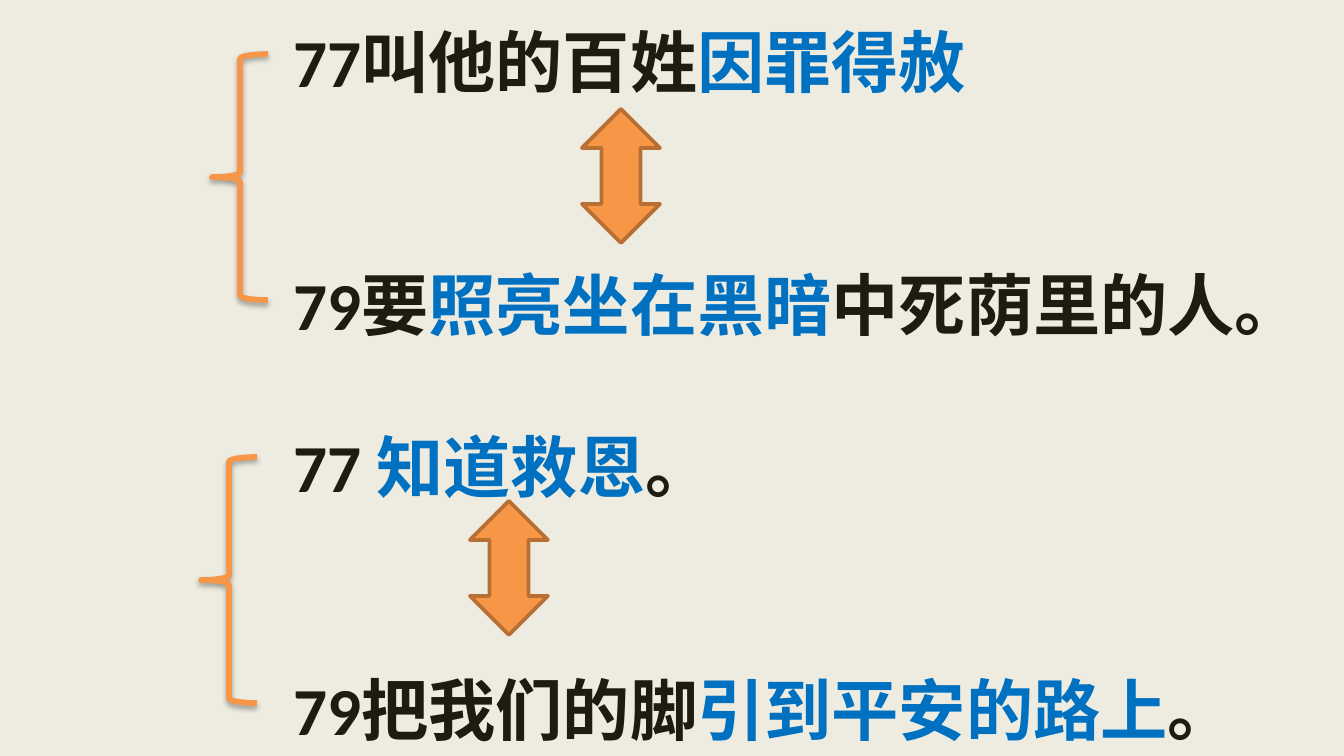
from lxml import etree
from pptx import Presentation
from pptx.dml.color import RGBColor
from pptx.enum.shapes import MSO_SHAPE
from pptx.enum.text import MSO_ANCHOR, PP_ALIGN
from pptx.oxml import parse_xml
from pptx.util import Emu, Pt

ARROW, BRACE = MSO_SHAPE.UP_DOWN_ARROW, MSO_SHAPE.LEFT_BRACE
TOP, LEFT = MSO_ANCHOR.TOP, PP_ALIGN.LEFT
PX = 914400 / 134.4
W, H = 1344, 756
PITCH = 43.4  # line height in points
DARK, BLUE, ORANGE, RUST = "1E1C11", "0070C0", "F79646", "B76F34"

# Verses: empty lines before, then (text, colour) runs
VERSES = [
    (0, [("77叫他的百姓", DARK), ("因罪得赦", BLUE)]),
    (2, [("79要", DARK), ("照亮坐在黑暗", BLUE), ("中死荫里的人。", DARK)]),
    (1, [("77 ", DARK), ("知道救恩", BLUE), ("。", DARK)]),
    (2, [("79把我们的脚", DARK), ("引到平安的路上", BLUE), ("。", DARK)]),
]
# Left and top of each mark, in px
ARROWS, ARROW_SIZE = [(582, 109), (470, 501)], (78, 134)
BRACES, BRACE_SIZE = [(212, 54), (201, 457)], (56, 246)

SHADOW = """<a:effectLst xmlns:a="http://schemas.openxmlformats.org/drawingml/2006/main">
<a:outerShdw blurRad="39370" dist="22860" dir="5400000" rotWithShape="0">
<a:srgbClr val="000000"><a:alpha val="35000"/></a:srgbClr></a:outerShdw></a:effectLst>"""


def px(n):
    return Emu(round(n * PX))


def rgb(value):
    return RGBColor.from_string(value)


def add_mark(s, kind, place, size, line, width):
    sp = s.shapes.add_shape(kind, *map(px, place + size))
    sp.shadow.inherit = False
    sp.line.color.rgb = rgb(line)
    sp.line.width = Pt(width)
    return sp


def add_verses(s):
    tf = s.shapes.add_textbox(px(280), 0, px(W - 280), px(H)).text_frame
    tf.word_wrap = True
    tf.vertical_anchor = TOP
    tf.margin_top = px(20)
    for i, (gap, runs) in enumerate(VERSES):
        p = tf.add_paragraph() if i else tf.paragraphs[0]
        p.alignment = LEFT
        p.line_spacing = Pt(PITCH)
        if gap:
            p.space_before = Pt(gap * PITCH)
        for text, color in runs:
            r = p.add_run()
            r.text = text
            r.font.name, r.font.size, r.font.bold = "Calibri", Pt(36), True
            r.font.color.rgb = rgb(color)


def main():
    prs = Presentation()
    prs.slide_width, prs.slide_height = px(W), px(H)
    s = prs.slides.add_slide(prs.slide_layouts[6])
    s.background.fill.solid()
    s.background.fill.fore_color.rgb = rgb("EEECE1")

    add_verses(s)

    # Arrows between paired verses
    for place in ARROWS:
        sp = add_mark(s, ARROW, place, ARROW_SIZE, RUST, 2)
        sp.fill.solid()
        sp.fill.fore_color.rgb = rgb(ORANGE)

    # Braces with a soft shadow
    for place in BRACES:
        sp = add_mark(s, BRACE, place, BRACE_SIZE, ORANGE, 3)
        sp.fill.background()
        props = sp.element.spPr
        empty = props.find("{*}effectLst")
        props.replace(empty, parse_xml(etree.tostring(etree.fromstring(SHADOW))))

    prs.save("out.pptx")


if __name__ == "__main__":
    main()
